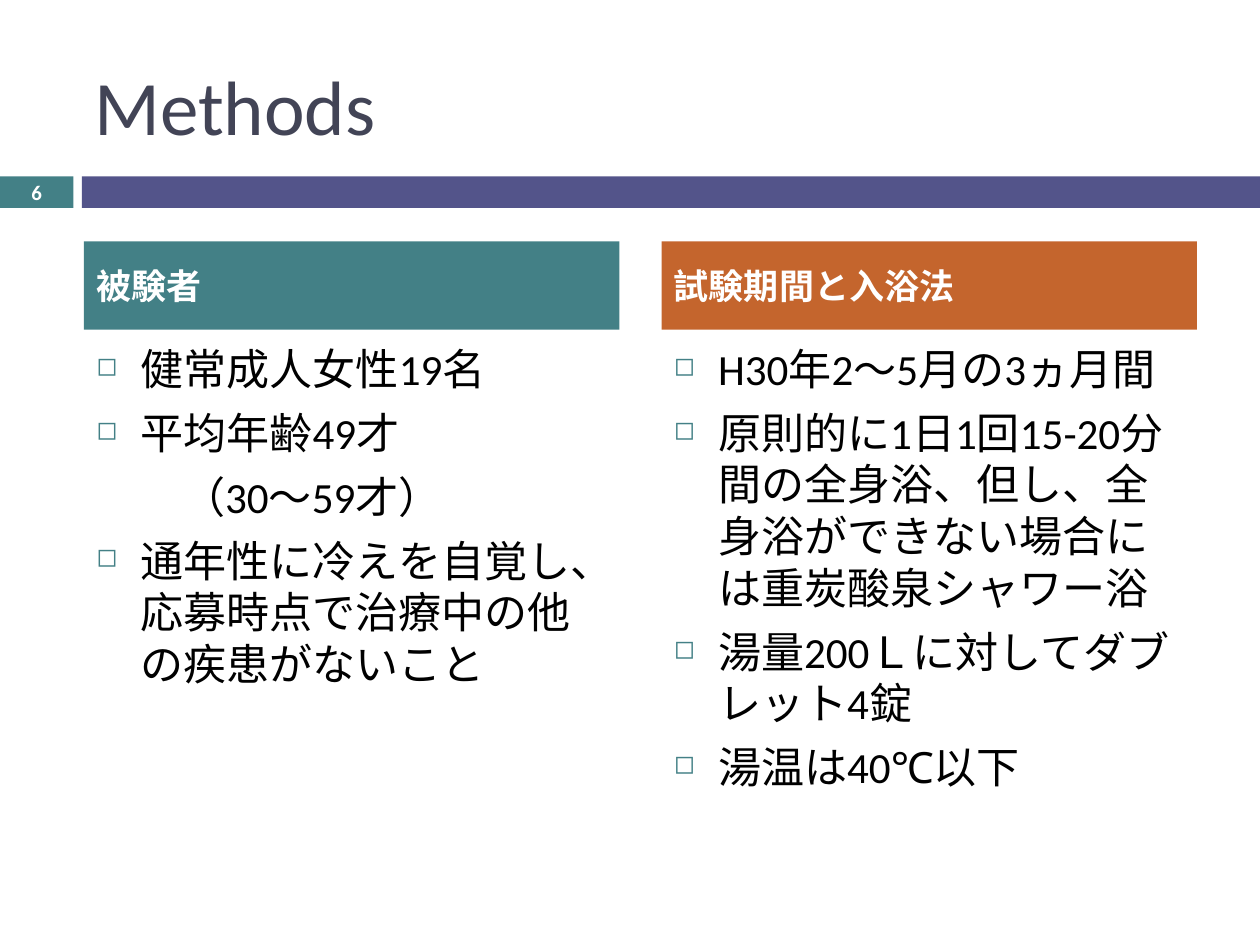
from lxml import etree
from pptx import Presentation
from pptx import util as u
from pptx.dml.color import RGBColor
from pptx.enum import shapes, text
from pptx.oxml.ns import qn

COLORS = {
    "teal": "438086",
    "violet": "53548A",
    "orange": "C4652D",
    "slate": "424456",
    "black": "000000",
    "white": "FFFFFF",
}
COLUMNS, ROWS = 120, 90
FONT = "Calibri"


class MethodsSlide:
    def __init__(self, deck):
        self.cell_width = deck.slide_width / COLUMNS
        self.cell_height = deck.slide_height / ROWS
        self.slide = deck.slides.add_slide(deck.slide_layouts[5])

    def box(self, column, row, columns, rows):
        return (
            round(column * self.cell_width),
            round(row * self.cell_height),
            round(columns * self.cell_width),
            round(rows * self.cell_height),
        )

    def style(self, paragraph, size, color, bold=False, align=text.PP_ALIGN.LEFT):
        paragraph.alignment = align
        font = paragraph.font
        font.name, font.size, font.bold = FONT, u.Pt(size), bold
        font.color.rgb = RGBColor.from_string(COLORS[color])

    def title(self, wording, *cells):
        heading = self.slide.shapes.title
        heading.left, heading.top, heading.width, heading.height = self.box(*cells)
        frame = heading.text_frame
        frame.text = wording
        frame.auto_size = text.MSO_AUTO_SIZE.NONE
        frame.vertical_anchor = text.MSO_ANCHOR.MIDDLE
        self.style(frame.paragraphs[0], 44, "slate")

    def band(self, fill, *cells, wording="", size=20, align=text.PP_ALIGN.LEFT):
        band = self.slide.shapes.add_shape(
            shapes.MSO_SHAPE.RECTANGLE, *self.box(*cells)
        )
        band.shadow.inherit = False
        band.fill.solid()
        band.fill.fore_color.rgb = RGBColor.from_string(COLORS[fill])
        band.line.fill.background()
        if wording:
            frame = band.text_frame
            frame.text = wording
            frame.vertical_anchor = text.MSO_ANCHOR.MIDDLE
            self.style(frame.paragraphs[0], size, "white", True, align)

    def bullet(self, paragraph):
        properties = paragraph._p.get_or_add_pPr()
        properties.set("marL", str(u.Inches(0.35)))
        properties.set("indent", str(-u.Inches(0.35)))
        color = etree.SubElement(properties, qn("a:buClr"))
        etree.SubElement(color, qn("a:srgbClr"), val=COLORS["teal"])
        etree.SubElement(properties, qn("a:buSzPct"), val="60000")
        etree.SubElement(properties, qn("a:buChar"), char="◻")

    def points(self, entries, *cells):
        frame = self.slide.shapes.add_textbox(*self.box(*cells)).text_frame
        frame.word_wrap = True
        for index, entry in enumerate(entries):
            paragraph = frame.add_paragraph() if index else frame.paragraphs[0]
            paragraph.text = entry
            paragraph.space_before = u.Pt(7)
            if entry.startswith("（"):
                paragraph._p.get_or_add_pPr().set("marL", str(u.Inches(0.68)))
            else:
                self.bullet(paragraph)
            self.style(paragraph, 24.6, "black")


SECTIONS = [
    ("被験者", "teal", [
        "健常成人女性19名",
        "平均年齢49才",
        "（30～59才）",
        "通年性に冷えを自覚し、応募時点で治療中の他の疾患がないこと",
    ]),
    ("試験期間と入浴法", "orange", [
        "H30年2～5月の3ヵ月間",
        "原則的に1日1回15-20分間の全身浴、但し、全身浴ができない場合には重炭酸泉シャワー浴",
        "湯量200Ｌに対してダブレット4錠",
        "湯温は40℃以下",
    ]),
]


def main():
    deck = Presentation()
    deck.slide_width, deck.slide_height = u.Inches(10), u.Inches(7.5)
    methods = MethodsSlide(deck)
    methods.title("Methods", 7.8, 4.3, 107, 11.4)
    methods.band("teal", 0, 16.8, 7, 3, wording="6", size=11.9,
                 align=text.PP_ALIGN.CENTER)
    methods.band("violet", 7.8, 16.8, 112.2, 3)
    for index, (heading, color, entries) in enumerate(SECTIONS):
        left = 8 + index * 55
        methods.band(color, left, 23, 51, 8.4, wording=heading)
        methods.points(entries, left, 32, 51, 47)
    deck.save("out.pptx")


if __name__ == "__main__":
    main()
